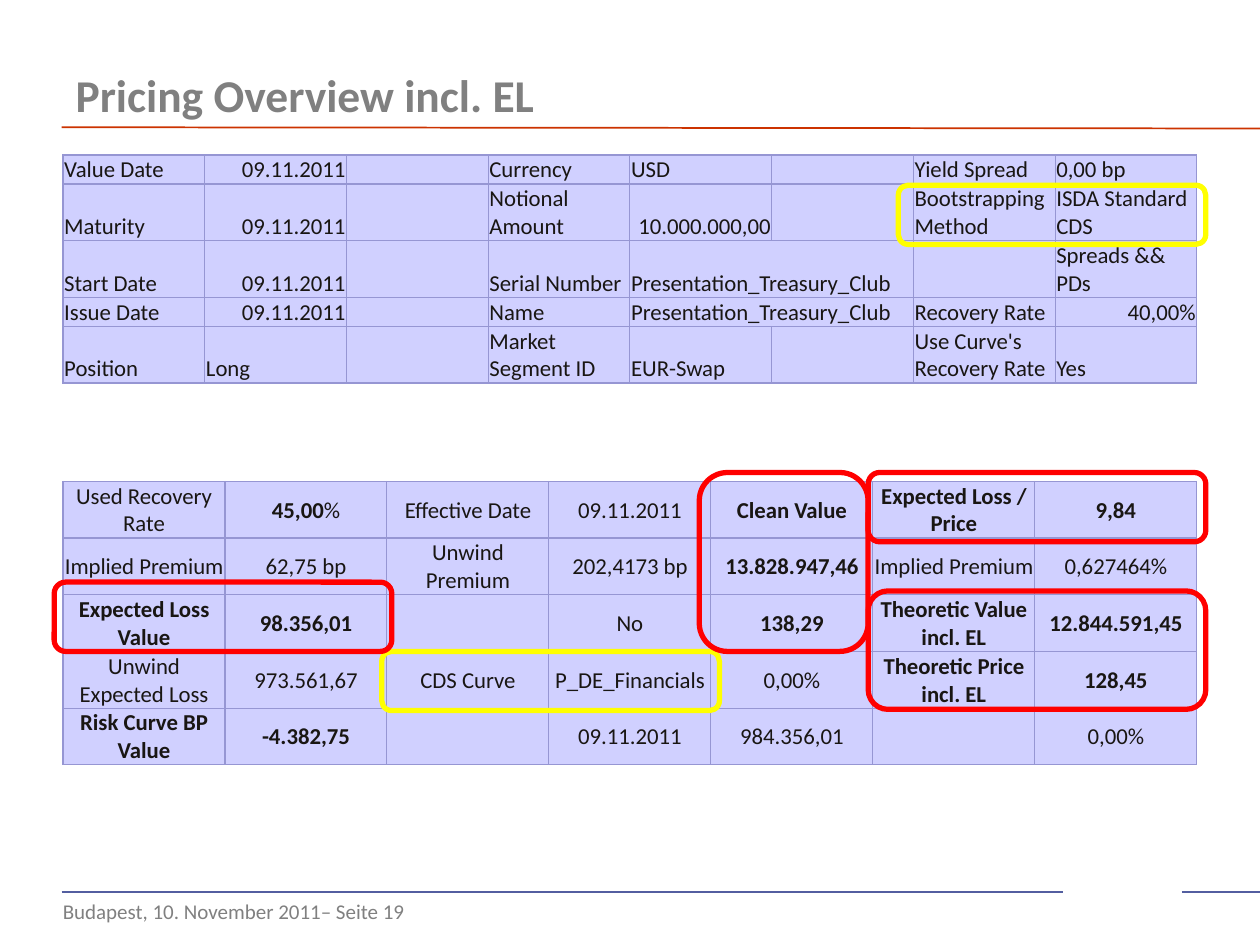
from dataclasses import dataclass
from typing import Any

from lxml.etree import SubElement
from pptx import Presentation
from pptx.dml.color import RGBColor
from pptx.enum.shapes import MSO_CONNECTOR as Connector, MSO_SHAPE as Shape
from pptx.enum.text import MSO_ANCHOR as Anchor, PP_ALIGN as Align
from pptx.oxml.ns import qn
from pptx.util import Inches, Pt

TERMS = [
    ["Value Date", "09.11.2011", "", "Currency", "USD", "", "Yield Spread", "0,00 bp"],
    ["Maturity", "09.11.2011", "", "Notional Amount", "10.000.000,00", "",
     "Bootstrapping Method", "ISDA Standard CDS"],
    ["Start Date", "09.11.2011", "", "Serial Number", "Presentation_Treasury_Club", "",
     "", "Spreads && PDs"],
    ["Issue Date", "09.11.2011", "", "Name", "Presentation_Treasury_Club", "",
     "Recovery Rate", "40,00%"],
    ["Position", "Long", "", "Market Segment ID", "EUR-Swap", "",
     "Use Curve's Recovery Rate", "Yes"],
]
RESULTS = [
    ["Used Recovery Rate", "*45,00*%", "Effective Date", "09.11.2011", "*Clean Value*",
     "*Expected Loss / Price*", "*9,84*"],
    ["Implied Premium", "62,75 bp", "Unwind Premium", "202,4173 bp", "*13.828.947,46*",
     "Implied Premium", "0,627464%"],
    ["*Expected Loss Value*", "*98.356,01*", "", "No", "*138,29*",
     "*Theoretic Value incl. EL*", "*12.844.591,45*"],
    ["Unwind Expected Loss", "973.561,67", "CDS Curve", "P_DE_Financials", "0,00%",
     "*Theoretic Price incl. EL*", "*128,45*"],
    ["*Risk Curve BP Value*", "*-4.382,75*", "", "09.11.2011", "984.356,01", "", "0,00%"],
]
HIGHLIGHTS = [
    (3.03, 5.17, 2.68, 0.47, "FFFF00"),
    (7.13, 1.47, 2.44, 0.47, "FFFF00"),
    (0.43, 4.62, 2.68, 0.55, "FF0000"),
    (6.89, 3.75, 2.68, 0.55, "FF0000"),
    (5.55, 3.75, 1.34, 1.42, "FF0000"),
    (6.89, 4.69, 2.68, 0.94, "FF0000"),
]


def color(value):
    return RGBColor.from_string(value)


def term_align(text):
    is_amount = text[:1].isdigit() and not text.endswith("bp")
    return Align.RIGHT if is_amount else Align.LEFT


def result_align(text):
    return Align.CENTER


@dataclass
class PricingPage:
    page: Any
    face: str = "Calibri"
    gray: str = "808080"
    ink: str = "191613"
    cell_fill: str = "D0D0FF"
    border: str = "9696D3"

    def set_font(self, font, size, ink, bold=None):
        font.name, font.size, font.bold = self.face, Pt(size), bold
        font.color.rgb = color(ink)

    def title(self, text, left, top, width, height):
        box = self.page.shapes.title
        box.left, box.top, box.width, box.height = map(Inches, (left, top, width, height))
        self.label(box.text_frame, text, 26, True)

    def footer(self, text, left, top, width, height):
        box = self.page.shapes.add_textbox(*map(Inches, (left, top, width, height)))
        self.label(box.text_frame, text, 12)

    def label(self, frame, text, size, bold=None):
        frame.word_wrap = True
        frame.vertical_anchor = Anchor.MIDDLE
        para = frame.paragraphs[0]
        para.text = text
        para.alignment = Align.LEFT
        self.set_font(para.font, size, self.gray, bold)

    def line(self, start, end, ink):
        rule = self.page.shapes.add_connector(
            Connector.STRAIGHT, *map(Inches, (*start, *end)))
        rule.line.color.rgb = color(ink)
        rule.line.width = Pt(1)
        SubElement(rule._element.spPr, qn("a:effectLst"))

    def highlight(self, left, top, width, height, ink):
        frame = self.page.shapes.add_shape(
            Shape.ROUNDED_RECTANGLE, *map(Inches, (left, top, width, height)))
        frame.shadow.inherit = False
        frame.fill.background()
        frame.line.color.rgb = color(ink)
        frame.line.width = Pt(3)

    def table(self, rows, left, top, width, heights, anchor, align):
        columns = len(rows[0])
        table = self.page.shapes.add_table(
            len(rows), columns, *map(Inches, (left, top, width, sum(heights)))).table
        table.first_row = table.horz_banding = False
        for column in table.columns:
            column.width = Inches(width / columns)
        for row, height, texts in zip(table.rows, heights, rows):
            row.height = Inches(height)
            for cell, text in zip(row.cells, texts):
                self.cell(cell, text, anchor, align(text))
        return table

    def cell(self, cell, text, anchor, alignment):
        cell.margin_left = cell.margin_right = cell.margin_top = Inches(0.01)
        cell.margin_bottom = 0
        cell.vertical_anchor = anchor
        para = cell.text_frame.paragraphs[0]
        para.alignment = alignment
        self.set_font(para.font, 13, self.ink)
        for index, part in enumerate(text.split("*")):
            if part:
                span = para.add_run()
                span.text = part
                span.font.bold = index % 2 == 1
        if not text:
            SubElement(para._p, qn("a:endParaRPr"), sz="1300")
        self.borders(cell)
        cell.fill.solid()
        cell.fill.fore_color.rgb = color(self.cell_fill)

    def borders(self, cell):
        properties = cell._tc.get_or_add_tcPr()
        for side in ("a:lnL", "a:lnR", "a:lnT", "a:lnB"):
            edge = SubElement(properties, qn(side), w=str(Pt(0.75)))
            fill = SubElement(edge, qn("a:solidFill"))
            SubElement(fill, qn("a:srgbClr"), val=self.border)


def main():
    deck = Presentation()
    deck.slide_width, deck.slide_height = Inches(10), Inches(7.5)
    pricing = PricingPage(deck.slides.add_slide(deck.slide_layouts[5]))

    pricing.line((0.49, 7.08), (8.44, 7.08), "535EA0")
    pricing.line((9.38, 7.08), (10, 7.08), "535EA0")
    pricing.line((0.49, 1.01), (10, 1.02), "CC3300")
    pricing.footer("Budapest, 10. November 2011– Seite 19", 0.4, 7.09, 3.23, 0.28)
    pricing.title("Pricing Overview incl. EL", 0.5, 0.51, 9, 0.47)

    terms = pricing.table(TERMS, 0.5, 1.23, 9, [0.23, 0.45, 0.45, 0.23, 0.45],
                          Anchor.BOTTOM, term_align)
    for row in (2, 3):
        terms.cell(row, 4).merge(terms.cell(row, 5))
    pricing.table(RESULTS, 0.5, 3.82, 9, [0.45] * 5, Anchor.MIDDLE, result_align)

    for highlight in HIGHLIGHTS:
        pricing.highlight(*highlight)
    deck.save("out.pptx")


if __name__ == "__main__":
    main()
